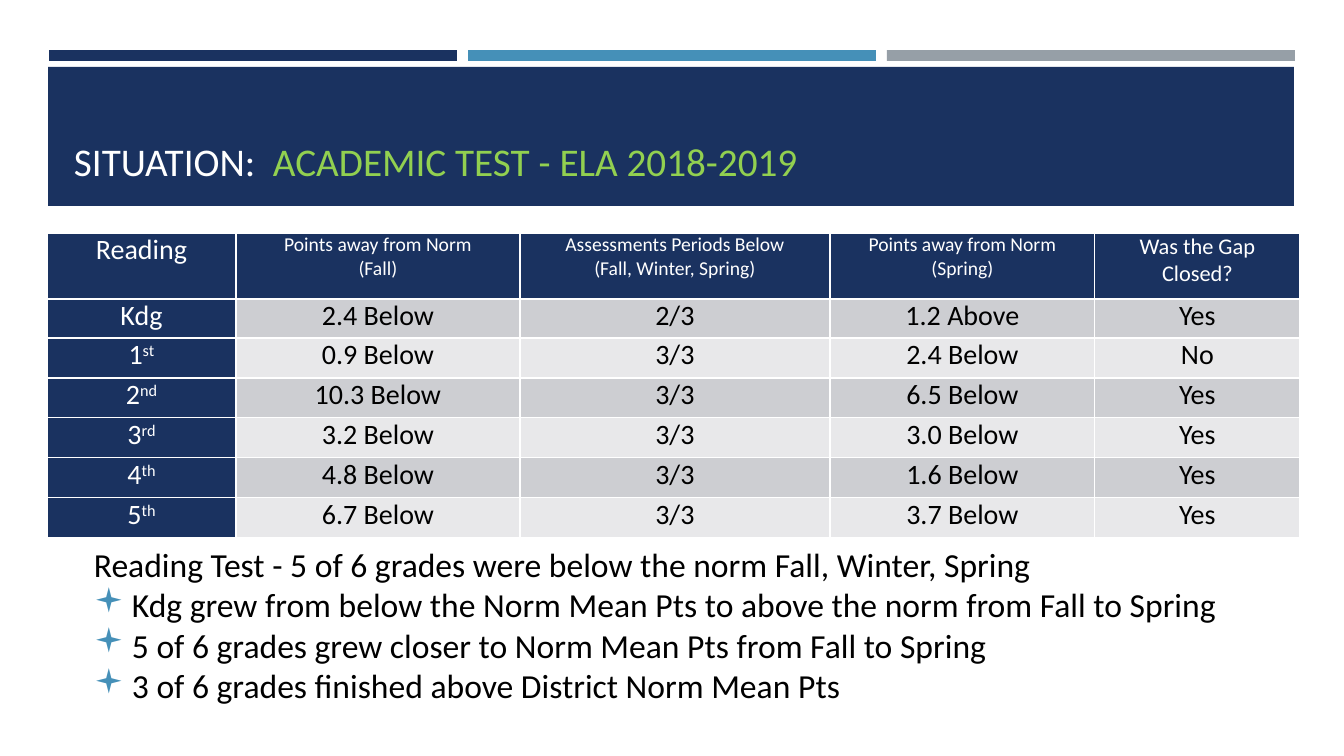
"""Build the ELA 2018-2019 academic test results slide."""
from lxml import etree
from pptx import Presentation
from pptx.dml.color import RGBColor
from pptx.enum.shapes import MSO_SHAPE
from pptx.enum.text import MSO_ANCHOR, PP_ALIGN
from pptx.oxml.ns import qn
from pptx.util import Emu, Pt

RECT = MSO_SHAPE.RECTANGLE
BOTTOM, TOP = MSO_ANCHOR.BOTTOM, MSO_ANCHOR.TOP
LEFT, CENTER = PP_ALIGN.LEFT, PP_ALIGN.CENTER

TITLE = ("SITUATION:  ", "ACADEMIC TEST - ELA 2018-2019")
HEADERS = [
    ("Reading", 20),
    ("Points away from Norm\n(Fall)", 14),
    ("Assessments Periods Below\n(Fall, Winter, Spring)", 14),
    ("Points away from Norm\n(Spring)", 14),
    ("Was the Gap Closed?", 16),
]
GRADES = [
    ("Kdg", "", "2.4 Below", "2/3", "1.2 Above", "Yes"),
    ("1", "st", "0.9 Below", "3/3", "2.4 Below", "No"),
    ("2", "nd", "10.3 Below", "3/3", "6.5 Below", "Yes"),
    ("3", "rd", "3.2 Below", "3/3", "3.0 Below", "Yes"),
    ("4", "th", "4.8 Below", "3/3", "1.6 Below", "Yes"),
    ("5", "th", "6.7 Below", "3/3", "3.7 Below", "Yes"),
]
SUMMARY = "Reading Test - 5 of 6 grades were below the norm Fall, Winter, Spring"
FINDINGS = [
    "Kdg grew from below the Norm Mean Pts to above the norm from Fall to Spring",
    "5 of 6 grades grew closer to Norm Mean Pts from Fall to Spring",
    "3 of 6 grades finished above District Norm Mean Pts",
]
THEME = {
    "font": "Calibri", "bullet_font": "Wingdings",
    "navy": "1A3260", "blue": "4590B8", "gray": "969FA7",
    "green": "92D050", "white": "FFFFFF", "black": "000000",
    "bands": ("CDCED2", "E8E8EA"),
    "title": 28, "body": 24, "cell": 20,
}
BAR_COLORS = ("navy", "blue", "gray")
BAR_LEFT, BAR_TOP, BAR_W, BAR_H, BAR_PITCH = 49, 50, 408, 11, 419
BAND_BOX = (48, 67, 1246, 139)
TITLE_BOX = (64, 80, 1216, 109)
BODY_BOX = (84, 539, 1175, 174)
TABLE_LEFT, TABLE_TOP = 47, 233
COLS = (189, 284, 310, 265, 205)
ROWS = (66, 39, 40, 40, 40, 40, 40)
CELL_PAD, INDENT = 7, 38


def px(n):
    return Emu(round(n * 914400 / 100.8))


def rgb(name):
    return RGBColor.from_string(THEME.get(name, name))


def style(p, size, color, align=LEFT):
    p.alignment = align
    f = p.font
    f.name, f.size, f.bold = THEME["font"], Pt(size), False
    f.color.rgb = rgb(color)


def add_rect(s, box, color):
    sp = s.shapes.add_shape(RECT, *map(px, box))
    sp.shadow.inherit = False
    sp.fill.solid()
    sp.fill.fore_color.rgb = rgb(color)
    sp.line.fill.background()


def add_text(s, box, anchor):
    tf = s.shapes.add_textbox(*map(px, box)).text_frame
    tf.word_wrap = True
    tf.vertical_anchor = anchor
    return tf


def add_bullet(p):
    pPr = p._p.get_or_add_pPr()
    pPr.set("marL", str(px(INDENT)))
    pPr.set("indent", str(-px(INDENT)))
    clr = etree.Element(qn("a:buClr"))
    etree.SubElement(clr, qn("a:srgbClr"), val=THEME["blue"])
    pPr.insert(0, clr)
    pPr.insert(1, etree.Element(qn("a:buFont"), typeface=THEME["bullet_font"]))
    pPr.insert(2, etree.Element(qn("a:buChar"), char="▪"))


def add_borders(cell):
    tcPr = cell._tc.get_or_add_tcPr()
    for i, tag in enumerate(("a:lnL", "a:lnR", "a:lnT", "a:lnB")):
        ln = etree.Element(qn(tag), w=str(Pt(1)))
        fill = etree.SubElement(ln, qn("a:solidFill"))
        etree.SubElement(fill, qn("a:srgbClr"), val=THEME["white"])
        tcPr.insert(i, ln)


def fill_cell(cell, text, size, fill, color, suffix=""):
    cell.margin_left = cell.margin_right = px(CELL_PAD)
    cell.margin_top = cell.margin_bottom = 0
    cell.fill.solid()
    cell.fill.fore_color.rgb = rgb(fill)
    add_borders(cell)
    cell.text_frame.text = text
    for p in cell.text_frame.paragraphs:
        style(p, size, color, CENTER)
    if suffix:
        r = p.add_run()
        r.text = suffix
        r._r.get_or_add_rPr().set("baseline", "30000")


def add_scores(s):
    table = s.shapes.add_table(
        len(ROWS), len(COLS), px(TABLE_LEFT), px(TABLE_TOP),
        px(sum(COLS)), px(sum(ROWS))).table
    for col, width in zip(table.columns, COLS):
        col.width = px(width)
    for row, height in zip(table.rows, ROWS):
        row.height = px(height)
    for j, (text, size) in enumerate(HEADERS):
        fill_cell(table.cell(0, j), text, size, "navy", "white")
    for i, (grade, suffix, *scores) in enumerate(GRADES, 1):
        fill_cell(table.cell(i, 0), grade, THEME["cell"], "navy", "white", suffix)
        band = THEME["bands"][(i - 1) % 2]
        for j, score in enumerate(scores, 1):
            fill_cell(table.cell(i, j), score, THEME["cell"], band, "black")


def main():
    prs = Presentation()
    prs.slide_width, prs.slide_height = px(1344), px(756)
    s = prs.slides.add_slide(prs.slide_layouts[6])

    for i, color in enumerate(BAR_COLORS):
        add_rect(s, (BAR_LEFT + i * BAR_PITCH, BAR_TOP, BAR_W, BAR_H), color)
    add_rect(s, BAND_BOX, "navy")

    p = add_text(s, TITLE_BOX, BOTTOM).paragraphs[0]
    style(p, THEME["title"], "white")
    for text, color in zip(TITLE, ("white", "green")):
        r = p.add_run()
        r.text = text
        r.font.color.rgb = rgb(color)

    add_scores(s)

    tf = add_text(s, BODY_BOX, TOP)
    tf.text = "\n".join([SUMMARY, *FINDINGS])
    for i, p in enumerate(tf.paragraphs):
        style(p, THEME["body"], "black")
        if i:
            add_bullet(p)

    prs.save("out.pptx")


if __name__ == "__main__":
    main()
